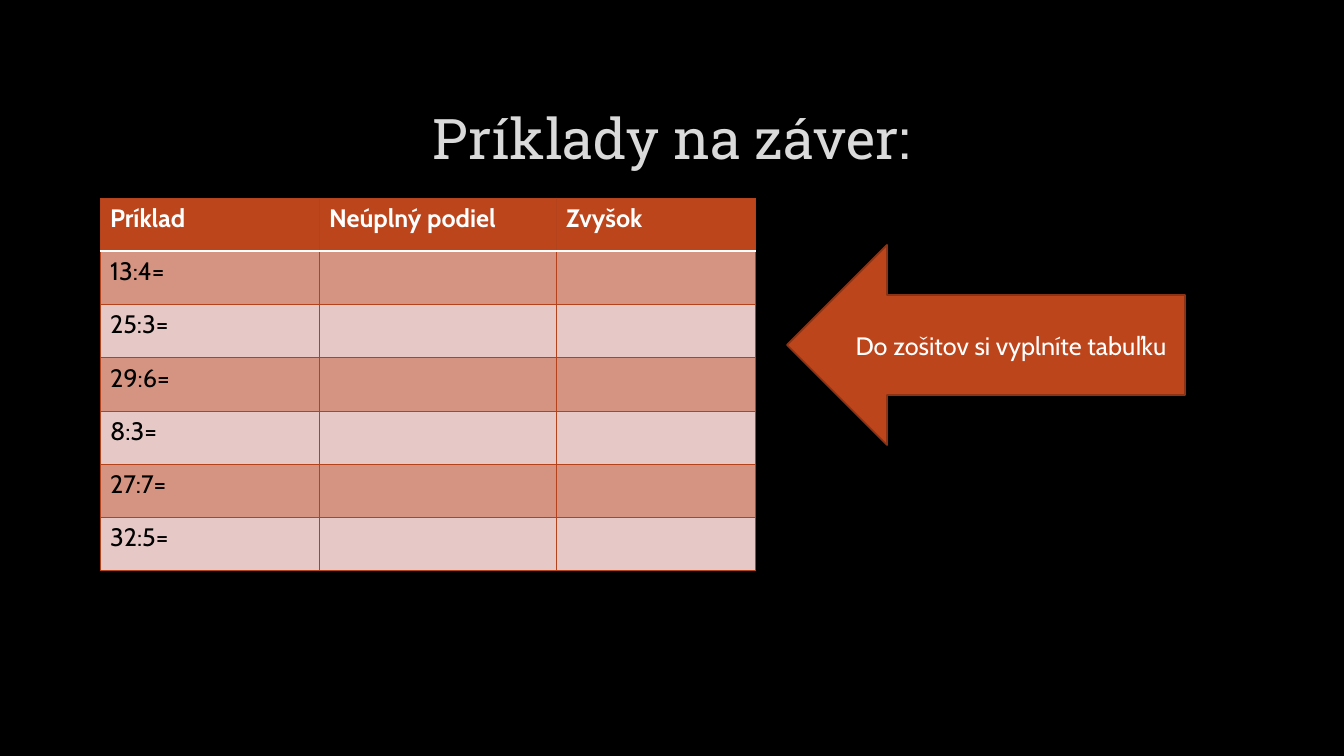
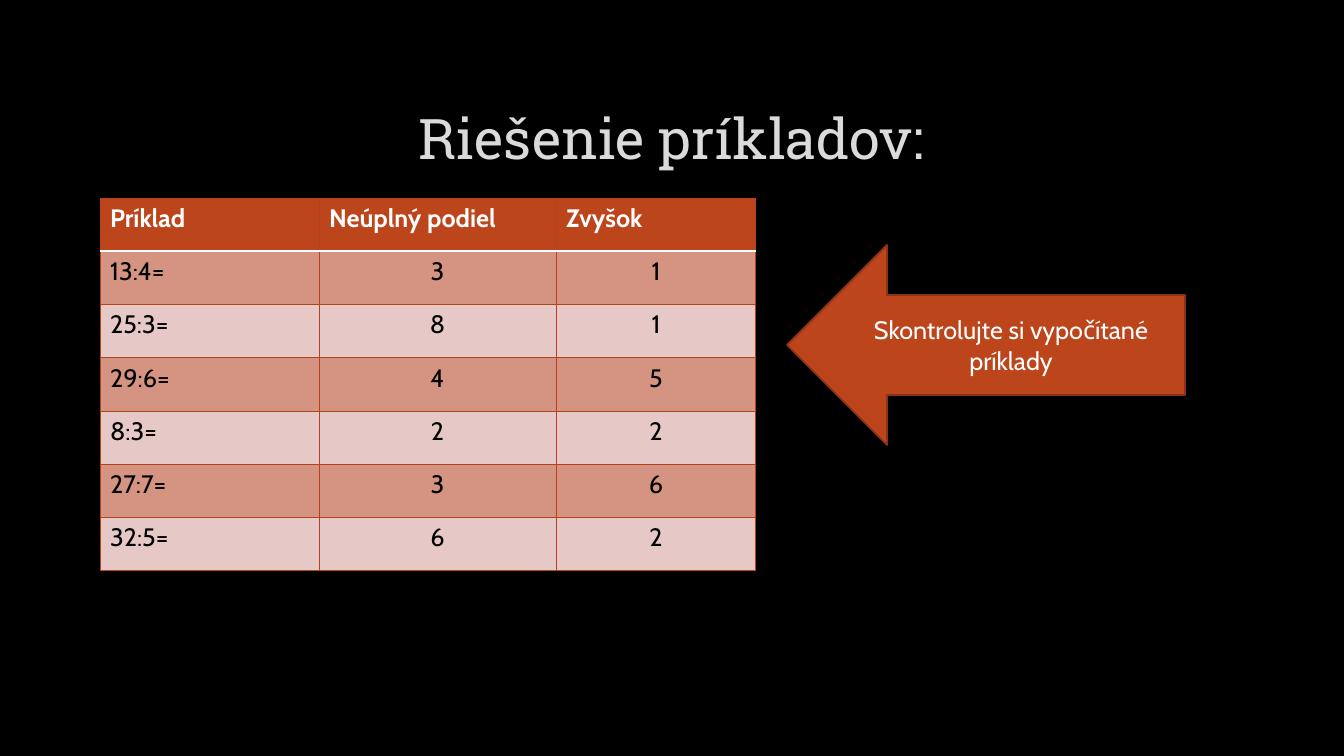
from lxml.etree import SubElement
from pptx import Presentation
from pptx.dml.color import RGBColor
from pptx.enum.shapes import MSO_SHAPE as Shape
from pptx.enum.text import MSO_ANCHOR as Anchor, PP_ALIGN as Align
from pptx.oxml.ns import qn
from pptx.util import Emu, Pt

# Content
HEADINGS = ("Príklad", "Neúplný podiel", "Zvyšok")
EXERCISES = (
    ("13:4=", "3", "1"),
    ("25:3=", "8", "1"),
    ("29:6=", "4", "5"),
    ("8:3=", "2", "2"),
    ("27:7=", "3", "6"),
    ("32:5=", "6", "2"),
)
PAGES = (
    {"title": "Príklady na záver:", "hint": "Do zošitov si vyplníte tabuľku", "solved": False},
    {"title": "Riešenie príkladov:", "hint": "Skontrolujte si vypočítané príklady", "solved": True},
)

# Shared look
BLACK, WHITE, TITLE_GREY = "000000", "FFFFFF", "DADADA"
RUST, RUST_EDGE, GRID = "BC451B", "8B3314", "B4421A"
BANDS = ("D59482", "E6C9C6")
TITLE_FONT, BODY_FONT = "Roboto Slab", "Cabin"

# Layout in px: left, top, width, height
SLIDE_SIZE = (1344, 756)
TITLE_BOX = (101, 68, 1141, 139)
TABLE_BOX = (100, 198, 656, 373)
COLUMNS = (219, 237, 200)
ARROW_BOX = (787, 245, 398, 200)
EMU_PER_PX = 12192000 / SLIDE_SIZE[0]


def px(length):
    return Emu(round(length * EMU_PER_PX))


def box(lengths):
    return [px(length) for length in lengths]


def color(hex_string):
    return RGBColor.from_string(hex_string)


def paint(fill, hex_string):
    fill.solid()
    fill.fore_color.rgb = color(hex_string)


def write(frame, text, font=BODY_FONT, size=18, ink=WHITE, bold=False, align=Align.LEFT):
    paragraph = frame.paragraphs[0]
    paragraph.alignment = align
    run = paragraph.add_run()
    run.text = text
    run.font.name, run.font.size, run.font.bold = font, Pt(size), bold
    run.font.color.rgb = color(ink)


def set_borders(cell, **white_sides):
    properties = cell._tc.get_or_add_tcPr()
    for side in "LRTB":
        ink, width = (WHITE, 1.25) if white_sides.get(side) else (GRID, 0.75)
        line = SubElement(properties, qn(f"a:ln{side}"), w=str(Pt(width)))
        fill = SubElement(line, qn("a:solidFill"))
        SubElement(fill, qn("a:srgbClr"), val=ink)


def add_exercises(slide, solved):
    rows = (HEADINGS, *EXERCISES)
    table = slide.shapes.add_table(len(rows), len(HEADINGS), *box(TABLE_BOX)).table
    for column, width in zip(table.columns, COLUMNS):
        column.width = px(width)
    for r, row in enumerate(rows):
        for c, entry in enumerate(row):
            cell = table.cell(r, c)
            set_borders(cell, B=r == 0, T=r == 1)
            paint(cell.fill, BANDS[(r - 1) % 2] if r else RUST)
            if r == 0:
                write(cell.text_frame, entry, bold=True)
            elif c == 0 or solved:
                write(cell.text_frame, entry, ink=BLACK, align=Align.CENTER if c else Align.LEFT)


def add_hint(slide, text):
    arrow = slide.shapes.add_shape(Shape.LEFT_ARROW, *box(ARROW_BOX))
    arrow.shadow.inherit = False
    paint(arrow.fill, RUST)
    arrow.line.color.rgb = color(RUST_EDGE)
    arrow.line.width = Pt(1.25)
    arrow.text_frame.word_wrap = True
    arrow.text_frame.vertical_anchor = Anchor.MIDDLE
    write(arrow.text_frame, text, align=Align.CENTER)


def main():
    deck = Presentation()
    deck.slide_width, deck.slide_height = box(SLIDE_SIZE)

    # Background and title place, inherited by every slide
    paint(deck.slide_master.background.fill, BLACK)
    layout = deck.slide_layouts.get_by_name("Title Only")
    heading = layout.placeholders[0]
    heading.left, heading.top, heading.width, heading.height = box(TITLE_BOX)
    heading.text_frame.vertical_anchor = Anchor.MIDDLE

    for page in PAGES:
        slide = deck.slides.add_slide(layout)
        write(slide.shapes.title.text_frame, page["title"], font=TITLE_FONT, size=40,
              ink=TITLE_GREY, align=Align.CENTER)
        add_exercises(slide, page["solved"])
        add_hint(slide, page["hint"])
    deck.save("out.pptx")


if __name__ == "__main__":
    main()
